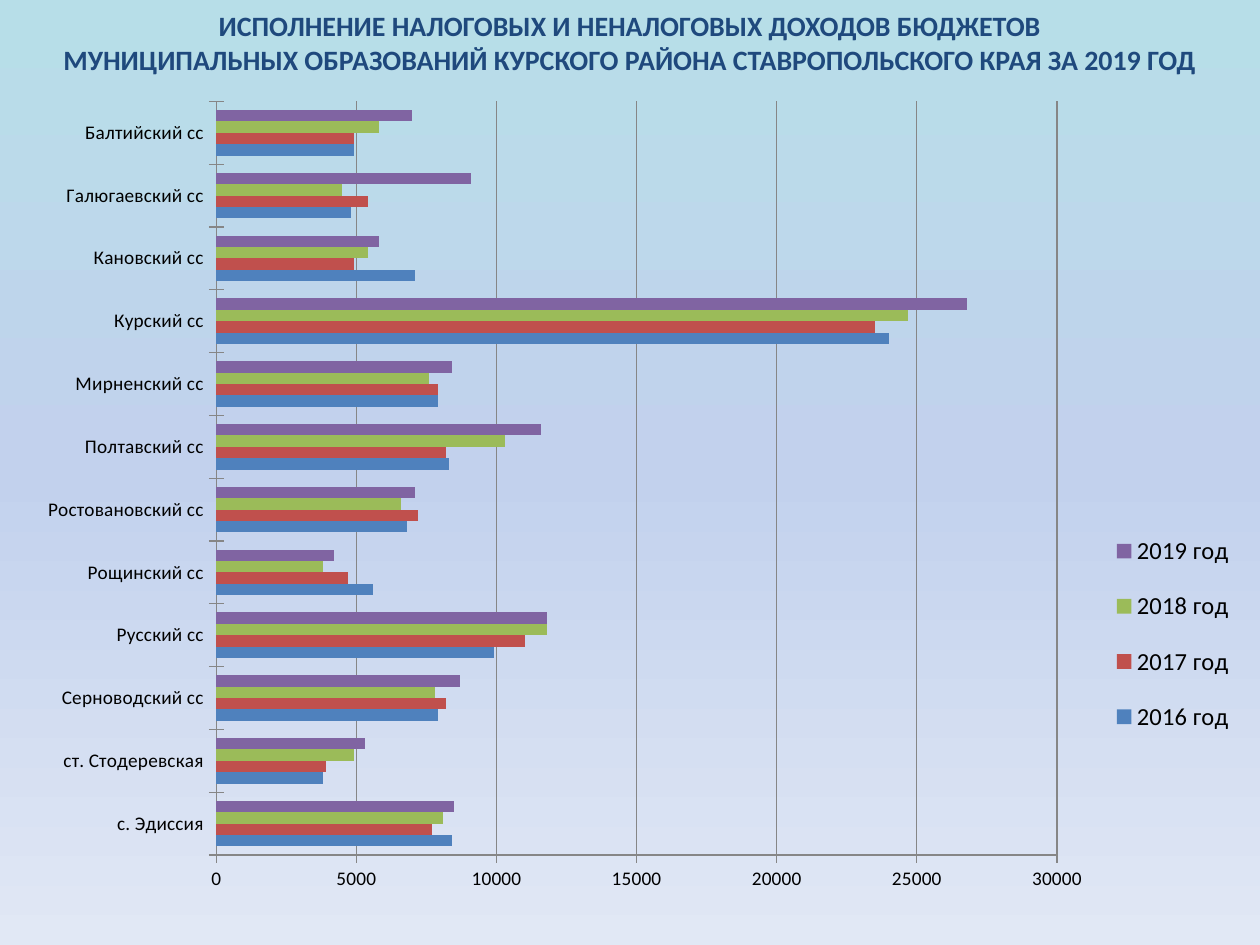
from copy import deepcopy

from lxml import etree
from pptx import Presentation
from pptx import util as u
from pptx.chart.data import CategoryChartData
from pptx.dml.color import RGBColor
from pptx.enum import chart as ch, text
from pptx.oxml.ns import qn

WIDTH, HEIGHT = u.Inches(10), u.Inches(7.5)
FONT = "Calibri"
COLORS = {
    "sky": "B7DEE8", "lilac": "C2D1ED", "mist": "E1E8F5",
    "heading": "1F497D", "ink": "000000", "axis": "868686",
    "2016 год": "4F81BD", "2017 год": "C0504D",
    "2018 год": "9BBB59", "2019 год": "8064A2",
}
HEADING = ("ИСПОЛНЕНИЕ НАЛОГОВЫХ И НЕНАЛОГОВЫХ ДОХОДОВ БЮДЖЕТОВ\n"
           "МУНИЦИПАЛЬНЫХ ОБРАЗОВАНИЙ КУРСКОГО РАЙОНА СТАВРОПОЛЬСКОГО КРАЯ ЗА 2019 ГОД")
YEARS = ("2016 год", "2017 год", "2018 год", "2019 год")
INCOME = {
    "с. Эдиссия": (8400, 7700, 8100, 8500),
    "ст. Стодеревская": (3800, 3900, 4900, 5300),
    "Серноводский сс": (7900, 8200, 7800, 8700),
    "Русский сс": (9900, 11000, 11800, 11800),
    "Рощинский сс": (5600, 4700, 3800, 4200),
    "Ростовановский сс": (6800, 7200, 6600, 7100),
    "Полтавский сс": (8300, 8200, 10300, 11600),
    "Мирненский сс": (7900, 7900, 7600, 8400),
    "Курский сс": (24000, 23500, 24700, 26800),
    "Кановский сс": (7100, 4900, 5400, 5800),
    "Галюгаевский сс": (4800, 5400, 4500, 9100),
    "Балтийский сс": (4900, 4900, 5800, 7000),
}


def color(name):
    """Return the named colour."""
    return RGBColor.from_string(COLORS[name])


def area(left, top, width, height):
    """Turn shares of the slide into lengths."""
    return (int(WIDTH * left), int(HEIGHT * top),
            int(WIDTH * width), int(HEIGHT * height))


def style(font, size, ink="ink", bold=False):
    """Set the typeface, size, colour and weight of a font."""
    font.name, font.size, font.bold = FONT, u.Pt(size), bold
    font.color.rgb = color(ink)


def paint_background(slide, names):
    """Fill the slide from top to bottom with evenly spaced colours."""
    fill = slide.background.fill
    fill.gradient()
    fill.gradient_angle = 270
    first = fill.gradient_stops
    stop_list = next(slide.element.iter(qn("a:gsLst")))
    for _ in range(len(names) - len(first)):
        stop_list.append(deepcopy(stop_list[0]))
    for index, (stop, name) in enumerate(zip(fill.gradient_stops, names)):
        stop.position = index / (len(names) - 1)
        stop.color.rgb = color(name)


def add_text(slide, box, words, **look):
    """Add a centred text box with the given format."""
    frame = slide.shapes.add_textbox(*box).text_frame
    frame.word_wrap = True
    frame.margin_left = frame.margin_right = 0
    frame.vertical_anchor = text.MSO_ANCHOR.MIDDLE
    line = frame.paragraphs[0]
    line.text = words
    line.alignment = text.PP_ALIGN.CENTER
    for run in line.runs:
        style(run.font, **look)


def set_layout(part, position, shares, inner=False):
    """Place a chart part at shares of the chart's size."""
    for old in part.findall(qn("c:layout")):
        part.remove(old)
    layout = etree.Element(qn("c:layout"))
    manual = etree.SubElement(layout, qn("c:manualLayout"))
    settings = [("layoutTarget", "inner")] if inner else []
    settings += [("xMode", "edge"), ("yMode", "edge"), *zip("xywh", shares)]
    for tag, value in settings:
        etree.SubElement(manual, qn(f"c:{tag}")).set("val", str(value))
    part.insert(position, layout)


def format_axis(axis, gridlines):
    """Give an axis crossing ticks, grey lines and small labels."""
    axis.major_tick_mark = ch.XL_TICK_MARK.CROSS
    axis.minor_tick_mark = ch.XL_TICK_MARK.NONE
    axis.has_major_gridlines = gridlines
    lines = [axis.format.line]
    if gridlines:
        lines.append(axis.major_gridlines.format.line)
    for line in lines:
        line.color.rgb = color("axis")
        line.width = u.Pt(0.75)
    style(axis.tick_labels.font, 11)


def add_income_chart(slide, box):
    """Add the clustered bars of income by settlement and year."""
    data = CategoryChartData(number_format="0")
    data.categories = list(INCOME)
    for year, values in zip(YEARS, zip(*INCOME.values())):
        data.add_series(year, values)
    income = slide.shapes.add_chart(ch.XL_CHART_TYPE.BAR_CLUSTERED, *box, data).chart
    style(income.font, 11)
    income.has_title = False

    bars = income.plots[0]
    bars.gap_width, bars.overlap, bars.vary_by_categories = 150, 0, False
    for series in bars.series:
        series.format.fill.solid()
        series.format.fill.fore_color.rgb = color(series.name)
    format_axis(income.category_axis, gridlines=False)
    format_axis(income.value_axis, gridlines=True)
    income.value_axis.minimum_scale = 0
    income.value_axis.maximum_scale = 30000
    income.value_axis.major_unit = 5000

    income.has_legend = True
    legend = income.legend
    legend.position = ch.XL_LEGEND_POSITION.RIGHT
    legend.include_in_layout = False
    style(legend.font, 14)
    plot_area = next(income.element.iter(qn("c:plotArea")))
    legend_area = next(income.element.iter(qn("c:legend")))
    set_layout(plot_area, 0, (0.16, 0.02, 0.69, 0.92), inner=True)
    set_layout(legend_area, 1, (0.89, 0.52, 0.11, 0.3))


def main():
    """Build and save the slide."""
    deck = Presentation()
    deck.slide_width, deck.slide_height = WIDTH, HEIGHT
    slide = deck.slides.add_slide(deck.slide_layouts[6])
    paint_background(slide, ("sky", "lilac", "mist"))
    add_text(slide, area(0, 0, 1, 0.09), HEADING, size=16, ink="heading", bold=True)
    add_income_chart(slide, area(0.017, 0.09, 0.967, 0.867))
    deck.save("out.pptx")


if __name__ == "__main__":
    main()
